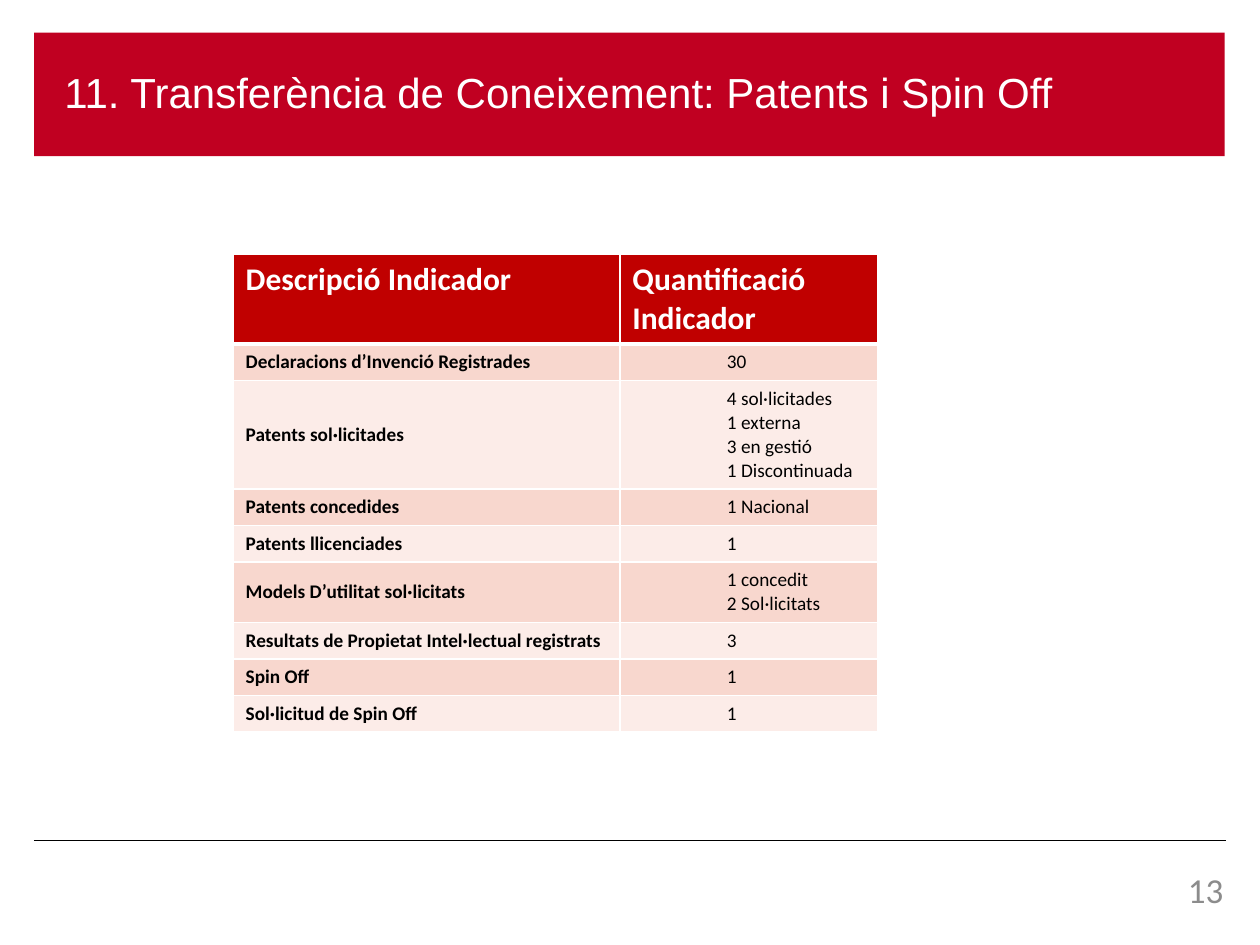
from dataclasses import dataclass

import pptx
import pptx.dml.color
import pptx.enum.shapes
import pptx.enum.text
import pptx.oxml
import pptx.oxml.ns
import pptx.util

Inches = pptx.util.Inches
Pt = pptx.util.Pt
RGBColor = pptx.dml.color.RGBColor
ALIGN = pptx.enum.text.PP_ALIGN
ANCHOR = pptx.enum.text.MSO_ANCHOR

CRIMSON = RGBColor(0xC0, 0x00, 0x21)
RED = RGBColor(0xC0, 0x00, 0x00)
ROSE = RGBColor(0xF8, 0xD7, 0xCE)
PALE = RGBColor(0xFC, 0xEC, 0xE8)
WHITE = RGBColor(0xFF, 0xFF, 0xFF)
BLACK = RGBColor(0x00, 0x00, 0x00)
GREY = RGBColor(0x8C, 0x8C, 0x8C)


@dataclass
class Style:
    size: float
    color: RGBColor
    bold: bool = False
    face: str = "Calibri"


@dataclass
class Entry:
    label: str
    values: list[str]


HEAD = Style(18, WHITE, True)
LABEL = Style(11, BLACK, True)
VALUE = Style(11, BLACK)

TITLES = ["Descripció Indicador", "Quantificació Indicador"]
ENTRIES = [
    Entry("Declaracions d’Invenció Registrades", ["30"]),
    Entry("Patents sol·licitades",
          ["4 sol·licitades", "1 externa", "3 en gestió", "1 Discontinuada"]),
    Entry("Patents concedides", ["1 Nacional"]),
    Entry("Patents llicenciades", ["1"]),
    Entry("Models D’utilitat sol·licitats", ["1 concedit", "2 Sol·licitats"]),
    Entry("Resultats de Propietat Intel·lectual registrats", ["3"]),
    Entry("Spin Off", ["1"]),
    Entry("Sol·licitud de Spin Off", ["1"]),
]


def write(frame, lines: list[str], style: Style, indent: float = 0) -> None:
    """Put one paragraph per line into a text frame."""
    for i, line in enumerate(lines):
        para = frame.paragraphs[0] if i == 0 else frame.add_paragraph()
        if indent:
            props = para._p.get_or_add_pPr()
            props.set("marL", str(Inches(indent)))
            props.set("indent", "0")
        run = para.add_run()
        run.text = line
        font = run.font
        font.size, font.bold, font.name = Pt(style.size), style.bold, style.face
        font.color.rgb = style.color


def edge(cell, base: float = 1) -> None:
    """Draw white cell borders; base is the bottom width in points."""
    props = cell._tc.get_or_add_tcPr()
    for i, side in enumerate(["lnL", "lnR", "lnT", "lnB"]):
        width = Pt(base if side == "lnB" else 1)
        line = pptx.oxml.parse_xml(
            f'<a:{side} {pptx.oxml.ns.nsdecls("a")} w="{width}">'
            f'<a:solidFill><a:srgbClr val="{WHITE}"/></a:solidFill></a:{side}>')
        props.insert(i, line)


def paint(cell, fill: RGBColor, base: float = 1) -> None:
    cell.fill.solid()
    cell.fill.fore_color.rgb = fill
    edge(cell, base)


def add_title(slide) -> None:
    bar = slide.shapes.add_shape(
        pptx.enum.shapes.MSO_SHAPE.RECTANGLE,
        Inches(0.27), Inches(0.26), Inches(9.45), Inches(0.98))
    bar.shadow.inherit = False
    bar.fill.solid()
    bar.fill.fore_color.rgb = CRIMSON
    bar.line.fill.background()
    frame = bar.text_frame
    frame.word_wrap = True
    frame.vertical_anchor = ANCHOR.MIDDLE
    frame.margin_left = Inches(0.24)
    write(frame, ["11. Transferència de Coneixement: Patents i Spin Off"],
          Style(24, WHITE, face="Arial"))
    frame.paragraphs[0].alignment = ALIGN.LEFT
    frame.paragraphs[0].line_spacing = 0.9


def add_grid(slide) -> None:
    heights = [0.7] + [0.1 + 0.19 * len(e.values) for e in ENTRIES]
    widths = [3.07, 2.05]
    table = slide.shapes.add_table(
        len(heights), len(widths), Inches(1.85), Inches(2.02),
        Inches(sum(widths)), Inches(sum(heights))).table
    for col, width in zip(table.columns, widths):
        col.width = Inches(width)
    for row, height in zip(table.rows, heights):
        row.height = Inches(height)

    # Header row
    for i, text in enumerate(TITLES):
        cell = table.cell(0, i)
        write(cell.text_frame, [text], HEAD)
        paint(cell, RED, 3)

    # Banded body rows
    for i, entry in enumerate(ENTRIES):
        left, right = table.cell(i + 1, 0), table.cell(i + 1, 1)
        write(left.text_frame, [entry.label], LABEL)
        write(right.text_frame, entry.values, VALUE, 0.75)
        for cell in (left, right):
            cell.vertical_anchor = ANCHOR.MIDDLE
            paint(cell, PALE if i % 2 else ROSE)


def add_foot(slide) -> None:
    rule = slide.shapes.add_connector(
        pptx.enum.shapes.MSO_CONNECTOR.STRAIGHT,
        Inches(0.27), Inches(6.67), Inches(9.73), Inches(6.67))
    rule.line.color.rgb = BLACK
    rule.line.width = Pt(0.5)
    rule._element.spPr.append(pptx.oxml.parse_xml(
        f'<a:effectLst {pptx.oxml.ns.nsdecls("a")}/>'))

    box = slide.shapes.add_textbox(
        Inches(8.98), Inches(6.89), Inches(0.73), Inches(0.4))
    frame = box.text_frame
    frame.word_wrap = True
    frame.margin_left = frame.margin_right = 0
    frame.margin_top = frame.margin_bottom = 0
    write(frame, ["13"], Style(20, GREY))
    frame.paragraphs[0].alignment = ALIGN.RIGHT


def main() -> None:
    deck = pptx.Presentation()
    deck.slide_width, deck.slide_height = Inches(10), Inches(7.5)
    slide = deck.slides.add_slide(deck.slide_layouts[6])
    add_title(slide)
    add_grid(slide)
    add_foot(slide)
    deck.save("out.pptx")


if __name__ == "__main__":
    main()
